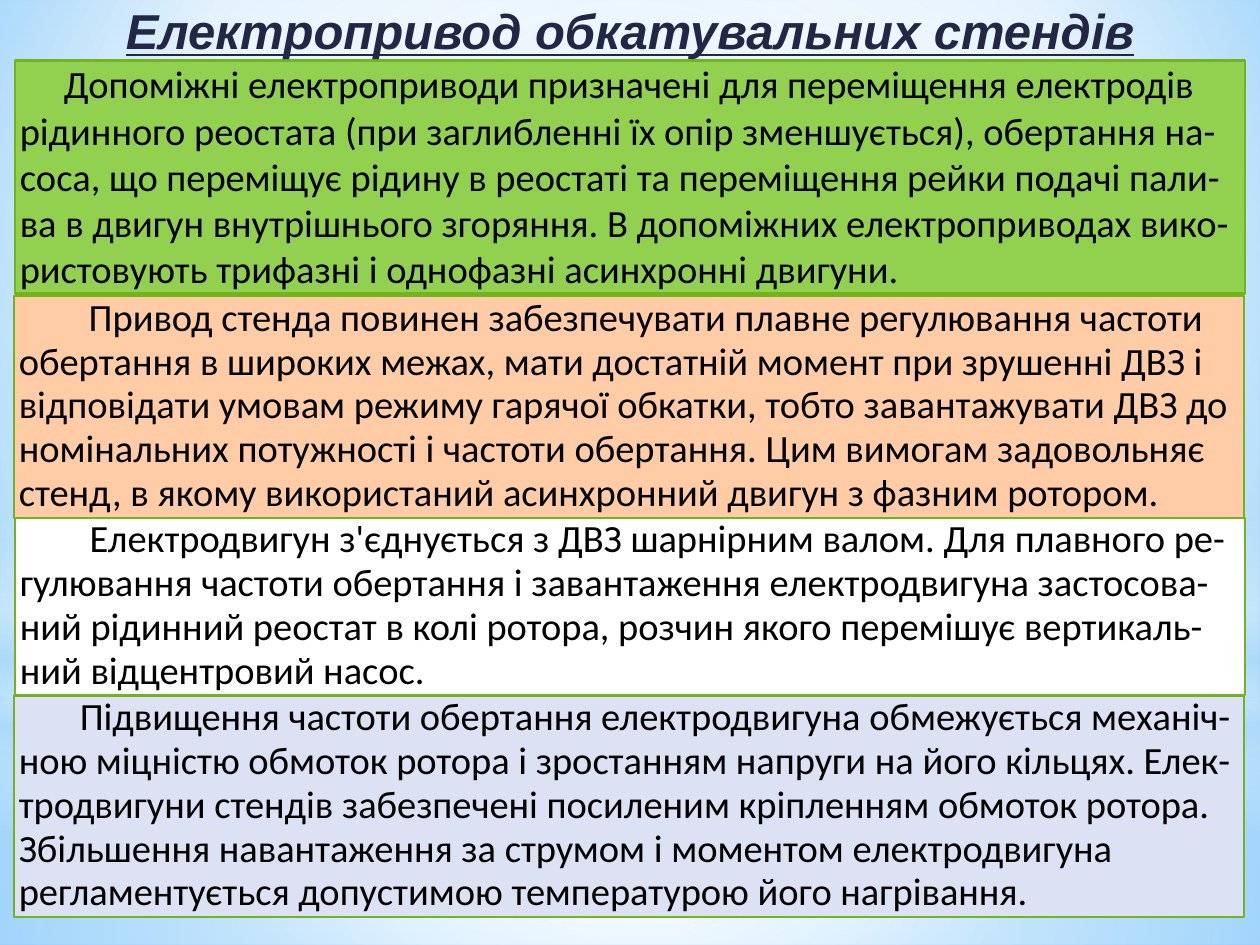
from dataclasses import dataclass

from lxml import etree
from pptx import Presentation
from pptx.dml.color import RGBColor
from pptx.enum.shapes import MSO_SHAPE
from pptx.enum.text import MSO_ANCHOR, PP_ALIGN
from pptx.oxml.ns import qn
from pptx.util import Cm, Pt

RECT, OVAL = MSO_SHAPE.RECTANGLE, MSO_SHAPE.OVAL
TOP, CENTER, LEFT = MSO_ANCHOR.TOP, PP_ALIGN.CENTER, PP_ALIGN.LEFT


@dataclass(frozen=True)
class Theme:
    title: str = "212745"
    text: str = "000000"
    border: str = "72B41D"
    green: str = "92D050"
    peach: str = "FFCCA6"
    white: str = "FFFFFF"
    lavender: str = "DCE1F4"
    sky: str = "B4DCFA"
    bright: str = "9ED5FF"
    deep: str = "5BB9FF"
    title_font: str = "Arial"
    body_font: str = "Calibri"
    title_size: int = 28
    body_size: int = 22


T = Theme()


def set_gradient(element, stops, focus=None):
    grad = element.find(".//" + qn("a:gradFill"))
    for child in list(grad):
        grad.remove(child)
    gs_list = etree.SubElement(grad, qn("a:gsLst"))
    for pos, color, alpha in stops:
        gs = etree.SubElement(gs_list, qn("a:gs"), pos=str(pos * 1000))
        clr = etree.SubElement(gs, qn("a:srgbClr"), val=color)
        if alpha < 100:
            etree.SubElement(clr, qn("a:alpha"), val=str(alpha * 1000))
    if focus:
        path = etree.SubElement(grad, qn("a:path"), path="circle")
        rect = etree.SubElement(path, qn("a:fillToRect"))
        for side, value in zip("ltrb", focus):
            rect.set(side, str(value * 1000))
    else:
        etree.SubElement(grad, qn("a:lin"), ang="5400000", scaled="0")


def write_text(sp, text, font, size, color, spacing, align, inset):
    tf = sp.text_frame
    tf.text = text
    tf.word_wrap = True
    tf.vertical_anchor = TOP
    tf.margin_left = tf.margin_right = inset
    tf.margin_top = tf.margin_bottom = 0
    p = tf.paragraphs[0]
    p.alignment = align
    p.line_spacing = spacing
    r = p.runs[0]
    r.font.name = font
    r.font.size = Pt(size)
    r.font.color.rgb = RGBColor.from_string(color)
    return p


prs = Presentation()
prs.slide_width, prs.slide_height = Cm(25.4), Cm(19.05)
s = prs.slides.add_slide(prs.slide_layouts[6])

s.background.fill.gradient()
set_gradient(
    s.background._cSld,
    [(0, T.bright, 100), (60, T.white, 100), (100, T.deep, 100)],
    (20, 10, 20, 60),
)

middle = (50, 50, 50, 50)
layers = [
    (RECT, 14.17, 4.88, middle, [(0, T.white, 91), (37, T.white, 76), (100, T.sky, 79)]),
    (RECT, 0, 14.17, middle, [(0, T.white, 89), (48, T.white, 62), (100, T.sky, 79)]),
    (RECT, 10.46, 6.35, None, [
        (0, T.white, 0), (29, T.white, 30), (45, T.sky, 40),
        (55, T.white, 26), (65, T.sky, 60), (100, T.white, 0),
    ]),
    (OVAL, 4.45, 14.17, middle, [(0, T.white, 100), (56, T.white, 0)]),
]
for shape, top, height, focus, stops in layers:
    sp = s.shapes.add_shape(shape, 0, Cm(top), prs.slide_width, Cm(height))
    sp.shadow.inherit = False
    sp.line.fill.background()
    sp.fill.gradient()
    set_gradient(sp._element.spPr, stops, focus)

panels = [
    (0.3, 1.22, 4.7, T.green, 1, 0.89,
     "Допоміжні електроприводи призначені для переміщення електродів рідинного "
     "реостата (при заглибленні їх опір зменшується), обертання на-соса, що "
     "переміщує рідину в реостаті та переміщення рейки подачі пали-ва в двигун "
     "внутрішнього згоряння. В допоміжних електроприводах вико-ристовують "
     "трифазні і однофазні асинхронні двигуни."),
    (0.28, 5.97, 4.47, T.peach, 0.95, 1.41,
     "Привод стенда повинен забезпечувати плавне регулювання частоти обертання "
     "в широких межах, мати достатній момент при зрушенні ДВЗ і відповідати "
     "умовам режиму гарячої обкатки, тобто завантажувати ДВЗ до номінальних "
     "потужності і частоти обертання. Цим вимогам задовольняє стенд, в якому "
     "використаний асинхронний двигун з фазним ротором."),
    (0.3, 10.44, 3.58, T.white, 0.95, 1.41,
     "Електродвигун з'єднується з ДВЗ шарнірним валом. Для плавного "
     "ре-гулювання частоти обертання і завантаження електродвигуна "
     "застосова-ний рідинний реостат в колі ротора, розчин якого перемішує "
     "вертикаль-ний відцентровий насос."),
    (0.28, 14.02, 4.47, T.lavender, 0.95, 1.23,
     "Підвищення частоти обертання електродвигуна обмежується механіч-ною "
     "міцністю обмоток ротора і зростанням напруги на його кільцях. "
     "Елек-тродвигуни стендів забезпечені посиленим кріпленням обмоток ротора. "
     "Збільшення навантаження за струмом і моментом електродвигуна "
     "регламентується допустимою температурою його нагрівання."),
]
for left, top, height, color, spacing, indent, text in panels:
    sp = s.shapes.add_shape(RECT, Cm(left), Cm(top), Cm(24.8), Cm(height))
    sp.shadow.inherit = False
    sp.fill.solid()
    sp.fill.fore_color.rgb = RGBColor.from_string(color)
    sp.line.color.rgb = RGBColor.from_string(T.border)
    sp.line.width = Pt(1.25)
    p = write_text(sp, text, T.body_font, T.body_size, T.text, spacing, LEFT, Cm(0.1))
    p._p.get_or_add_pPr().set("indent", str(Cm(indent)))

sp = s.shapes.add_textbox(Cm(0.3), Cm(0.2), Cm(24.8), Cm(1.02))
p = write_text(sp, "Електропривод обкатувальних стендів", T.title_font,
               T.title_size, T.title, 0.85, CENTER, 0)
font = p.runs[0].font
font.bold = font.italic = font.underline = True

prs.save("out.pptx")
